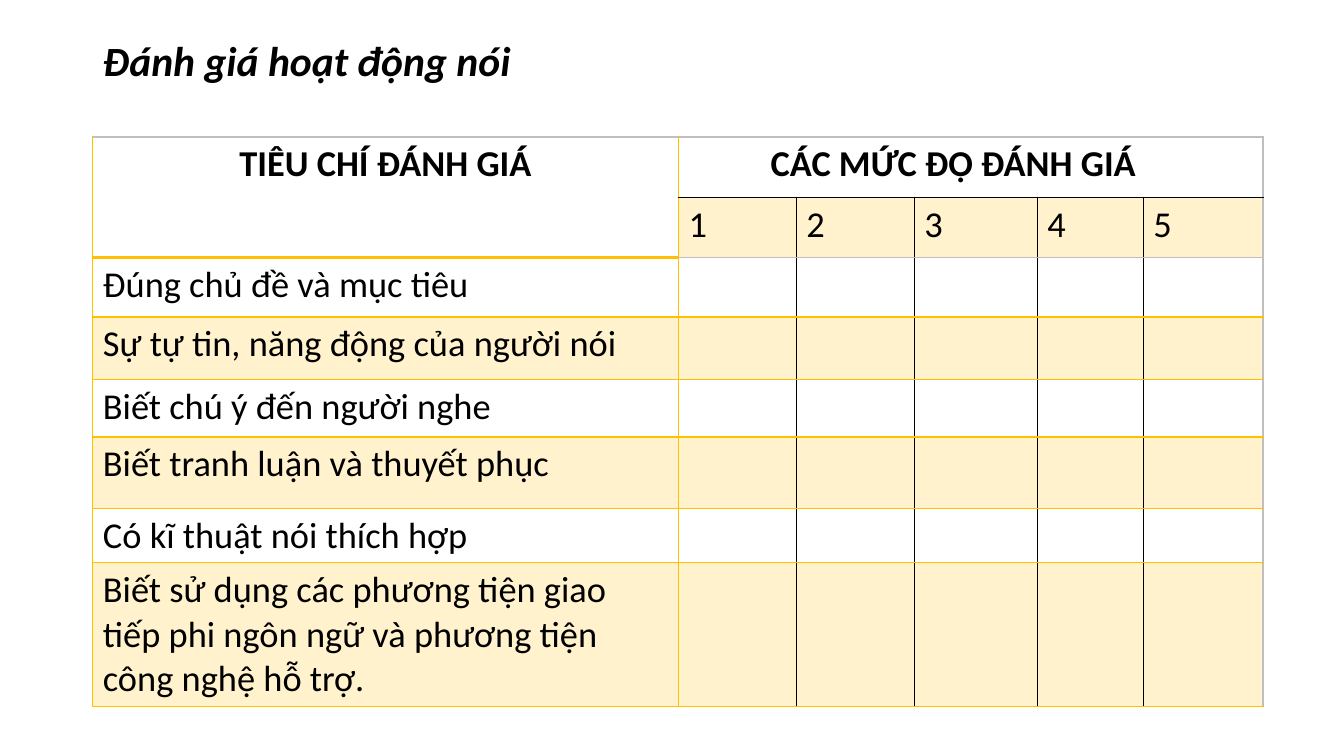
import pptx
import pptx.dml.color
import pptx.enum.text
import pptx.util
from lxml import etree
from pptx.oxml.ns import qn

Cm = pptx.util.Cm
Pt = pptx.util.Pt
BLACK, GOLD, GREY, CREAM = "000000", "FFC000", "BFBFBF", "FFF2CC"

COLUMN_WIDTHS = [14.76, 2.97, 2.97, 3.1, 2.67, 3.02]
ROW_HEIGHTS = [1.52, 1.52, 1.5, 1.57, 1.45, 1.8, 1.37, 3.62]
CRITERIA = [
    "Đúng chủ đề và mục tiêu",
    "Sự tự tin, năng động của người nói",
    "Biết chú ý đến người nghe",
    "Biết tranh luận và thuyết phục",
    "Có kĩ thuật nói thích hợp",
    "Biết sử dụng các phương tiện giao tiếp phi ngôn ngữ và phương tiện công nghệ hỗ trợ.",
]
LEVELS = ["1", "2", "3", "4", "5"]
ROWS = [["TIÊU CHÍ ĐÁNH GIÁ", "CÁC MỨC ĐỘ ĐÁNH GIÁ"], [""] + LEVELS]
ROWS += [[criterion] for criterion in CRITERIA]


def rgb(color):
    return pptx.dml.color.RGBColor.from_string(color)


def vertical_border(row, edge):
    if row == 0 and 1 < edge < 6:
        return None
    return {0: (GOLD, 1), 1: (GOLD, 1), 6: (GREY, 1)}.get(edge, (BLACK, 1))


def horizontal_border(edge, col):
    if edge == 0:
        return GREY, 1
    if edge == 1:
        return (BLACK, 1) if col else None
    if edge == 2:
        return (GREY, 1) if col else (GOLD, 2)
    return GOLD, 1


class SlideBuilder:
    font = "Calibri"

    def __init__(self, prs):
        self.s = prs.slides.add_slide(prs.slide_layouts[6])

    def style(self, p, size, bold=False, italic=False):
        p.font.name = self.font
        p.font.size = Pt(size)
        p.font.bold = bold
        p.font.italic = italic
        p.font.color.rgb = rgb(BLACK)

    def title(self, text, left, top, width, height):
        tf = self.s.shapes.add_textbox(Cm(left), Cm(top), Cm(width), Cm(height)).text_frame
        tf.word_wrap = True
        tf.vertical_anchor = pptx.enum.text.MSO_ANCHOR.MIDDLE
        tf.margin_top, tf.margin_bottom = 0, Cm(0.5)
        p = tf.paragraphs[0]
        p.text = text
        p.line_spacing = 0.9
        self.style(p, 29.7, bold=True, italic=True)

    def border(self, cell, side, line):
        if line is None:
            return
        color, width = line
        ln = etree.SubElement(cell._tc.get_or_add_tcPr(), qn("a:ln" + side), w=str(Pt(width)))
        fill = etree.SubElement(ln, qn("a:solidFill"))
        etree.SubElement(fill, qn("a:srgbClr"), val=color)

    def cell(self, cell, row, col, text):
        right_edge = 6 if (row, col) == (0, 1) else col + 1
        bottom_edge = 2 if (row, col) == (0, 0) else row + 1
        self.border(cell, "L", vertical_border(row, col))
        self.border(cell, "R", vertical_border(row, right_edge))
        self.border(cell, "T", horizontal_border(row, col))
        self.border(cell, "B", horizontal_border(bottom_edge, col))
        if row % 2 and (row, col) != (1, 0):
            cell.fill.solid()
            cell.fill.fore_color.rgb = rgb(CREAM)
        else:
            cell.fill.background()
        p = cell.text_frame.paragraphs[0]
        p.text = text
        self.style(p, 26, bold=row == 0)

    def table(self, rows, left, top):
        frame = self.s.shapes.add_table(
            len(ROW_HEIGHTS), len(COLUMN_WIDTHS), Cm(left), Cm(top),
            Cm(sum(COLUMN_WIDTHS)), Cm(sum(ROW_HEIGHTS)))
        table = frame.table
        table.first_row = table.horz_banding = False
        for column, width in zip(table.columns, COLUMN_WIDTHS):
            column.width = Cm(width)
        for row, height in zip(table.rows, ROW_HEIGHTS):
            row.height = Cm(height)
        for i, texts in enumerate(rows):
            for j in range(len(COLUMN_WIDTHS)):
                self.cell(table.cell(i, j), i, j, texts[j] if j < len(texts) else "")
        table.cell(0, 0).merge(table.cell(1, 0))
        table.cell(0, 1).merge(table.cell(0, 5))
        criteria_heading, levels_heading = table.cell(0, 0), table.cell(0, 1)
        criteria_heading.text_frame.paragraphs[0].alignment = pptx.enum.text.PP_ALIGN.CENTER
        levels_heading.margin_left = Cm(2.32)


def main():
    prs = pptx.Presentation()
    prs.slide_width, prs.slide_height = Cm(33.87), Cm(19.05)
    slide = SlideBuilder(prs)
    slide.title("Đánh giá hoạt động nói", 2.34, 1.14, 29.21, 1.4)
    slide.table(ROWS, 2.34, 3.45)
    prs.save("out.pptx")


if __name__ == "__main__":
    main()
